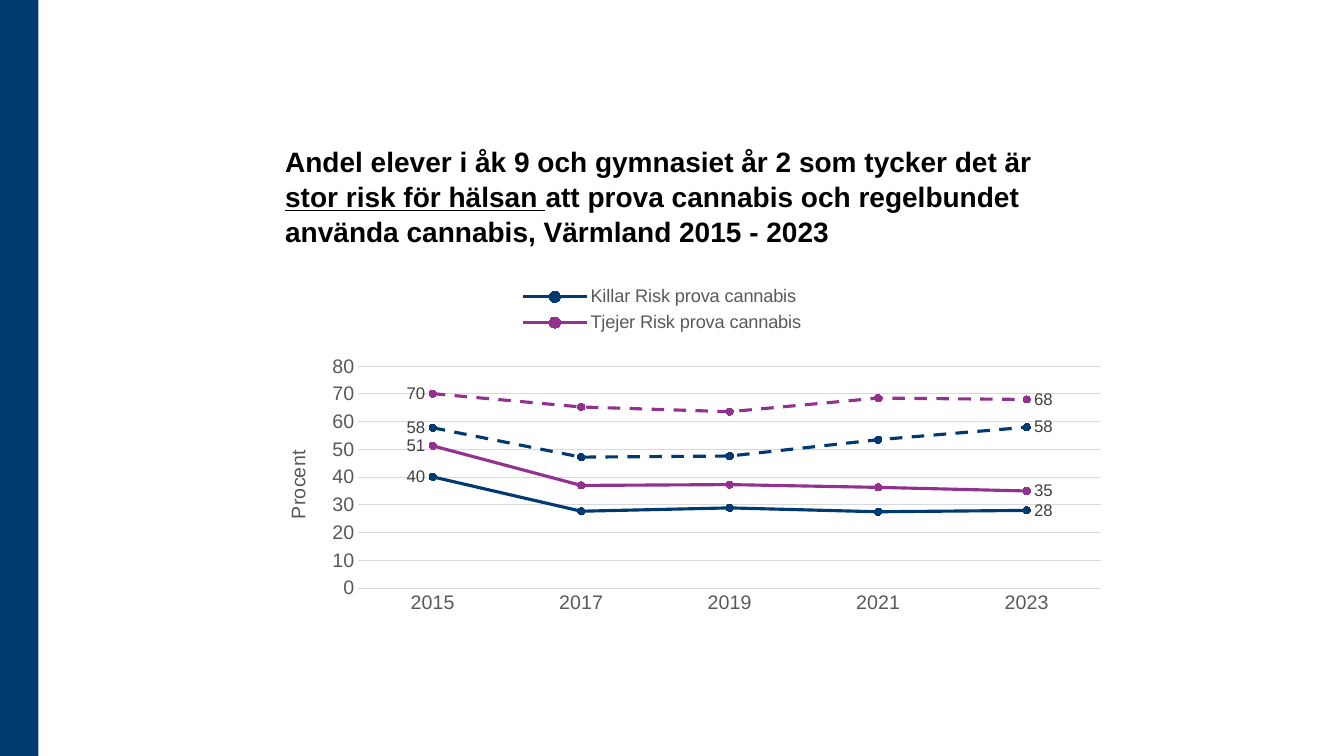
import pptx
import pptx.chart.data
import pptx.dml.color
import pptx.enum.chart
import pptx.enum.dml
import pptx.enum.shapes
import pptx.enum.text
import pptx.oxml
import pptx.oxml.ns
import pptx.util

Inches = pptx.util.Inches
Pt = pptx.util.Pt

NAVY = "003A70"
PURPLE = "93328E"
GREY = "595959"
GRID = "D9D9D9"

YEARS = ["2015", "2017", "2019", "2021", "2023"]
SERIES = [
    ("Killar Risk prova cannabis", [40.1, 27.7, 28.9, 27.5, 28], NAVY, False),
    ("Tjejer Risk prova cannabis", [51.3, 37, 37.3, 36.3, 35], PURPLE, False),
    ("Killar Risk regelbundet använda cannabis", [57.8, 47.2, 47.6, 53.5, 58], NAVY, True),
    ("Tjejer Risk regelbundet använda cannabis", [70.1, 65.3, 63.6, 68.5, 68], PURPLE, True),
]


def color(value):
    return pptx.dml.color.RGBColor.from_string(value)


def fill_solid(fill, value):
    fill.solid()
    fill.fore_color.rgb = color(value)


def style_font(font, size, value, bold=False, underline=False):
    font.name = "Arial"
    font.size = Pt(size)
    font.bold = bold
    font.underline = underline
    font.color.rgb = color(value)


def style_line(line, value, width):
    line.color.rgb = color(value)
    line.width = Pt(width)


def add_span(para, text, **style):
    span = para.add_run()
    span.text = text
    style_font(span.font, **style)


def add_side_bar(page):
    bar = page.shapes.add_shape(
        pptx.enum.shapes.MSO_SHAPE.RECTANGLE, 0, 0, Inches(0.38), Inches(7.5))
    bar.shadow.inherit = False
    fill_solid(bar.fill, NAVY)
    bar.line.fill.background()


def add_title(page):
    box = page.shapes.add_textbox(Inches(2.73), Inches(1.06), Inches(7.87), Inches(1.45))
    frame = box.text_frame
    frame.word_wrap = True
    frame.vertical_anchor = pptx.enum.text.MSO_ANCHOR.BOTTOM
    para = frame.paragraphs[0]
    para.line_spacing = 1.04
    style = {"size": 20, "value": "000000", "bold": True}
    add_span(para, "Andel elever i åk 9 och gymnasiet år 2 som tycker det är ", **style)
    add_span(para, "stor risk för hälsan ", underline=True, **style)
    add_span(para, "att prova cannabis och regelbundet använda cannabis, "
                   "Värmland 2015 - 2023", **style)


def layout_xml(left, top, width, height, inner=False):
    target = '<c:layoutTarget val="inner"/>' if inner else ""
    return pptx.oxml.parse_xml(
        f'<c:layout {pptx.oxml.ns.nsdecls("c")}><c:manualLayout>{target}'
        '<c:xMode val="edge"/><c:yMode val="edge"/>'
        f'<c:x val="{left}"/><c:y val="{top}"/><c:w val="{width}"/><c:h val="{height}"/>'
        '</c:manualLayout></c:layout>')


def set_plot_layout(chart):
    area = chart.plots[0]._element.getparent()
    for old in area.findall(pptx.oxml.ns.qn("c:layout")):
        area.remove(old)
    area.insert(0, layout_xml(0.099, 0.258, 0.883, 0.622, inner=True))


def style_legend(chart):
    chart.has_legend = True
    legend = chart.legend
    legend.position = pptx.enum.chart.XL_LEGEND_POSITION.TOP
    legend.include_in_layout = False
    style_font(legend.font, 13, GREY)
    element = legend._element
    for old in element.findall(pptx.oxml.ns.qn("c:layout")):
        element.remove(old)
    parts = [pptx.oxml.parse_xml(
        f'<c:legendEntry {pptx.oxml.ns.nsdecls("c")}><c:idx val="{index}"/>'
        '<c:delete val="1"/></c:legendEntry>')
        for index, row in enumerate(SERIES) if row[3]]
    parts.append(layout_xml(0.28, 0.02, 0.36, 0.16))
    for offset, part in enumerate(parts, start=1):
        element.insert(offset, part)


def style_axes(chart):
    years, percent = chart.category_axis, chart.value_axis
    for axis in (years, percent):
        axis.major_tick_mark = pptx.enum.chart.XL_TICK_MARK.NONE
        axis.minor_tick_mark = pptx.enum.chart.XL_TICK_MARK.NONE
        style_font(axis.tick_labels.font, 14, GREY)
    style_line(years.format.line, GRID, 0.75)
    percent.format.line.fill.background()
    percent.minimum_scale = 0
    percent.maximum_scale = 80
    percent.major_unit = 10
    percent.has_major_gridlines = True
    style_line(percent.major_gridlines.format.line, GRID, 0.75)
    percent.tick_labels.number_format = "0"
    percent.tick_labels.number_format_is_linked = False
    add_span(percent.axis_title.text_frame.paragraphs[0], "Procent", size=14, value=GREY)


def style_series(series, value, dashed):
    series.smooth = False
    style_line(series.format.line, value, 2.25)
    if dashed:
        series.format.line.dash_style = pptx.enum.dml.MSO_LINE.DASH
    series.marker.style = pptx.enum.chart.XL_MARKER_STYLE.CIRCLE
    series.marker.size = 5
    fill_solid(series.marker.format.fill, value)
    style_line(series.marker.format.line, value, 0.75)
    series.data_labels.show_value = False
    position = pptx.enum.chart.XL_LABEL_POSITION
    for index, side in ((0, position.LEFT), (len(YEARS) - 1, position.RIGHT)):
        label = series.points[index].data_label
        style_font(label.font, 12, "404040")
        label.position = side


def add_risk_chart(page):
    data = pptx.chart.data.CategoryChartData(number_format="0")
    data.categories = YEARS
    for name, values, _, _ in SERIES:
        data.add_series(name, values)
    chart = page.shapes.add_chart(
        pptx.enum.chart.XL_CHART_TYPE.LINE_MARKERS,
        Inches(2.73), Inches(2.72), Inches(8.34), Inches(3.54), data).chart
    chart.has_title = False
    style_font(chart.font, 14, "000000")
    chart.plots[0].vary_by_categories = False
    set_plot_layout(chart)
    style_legend(chart)
    style_axes(chart)
    for series, (_, _, value, dashed) in zip(chart.plots[0].series, SERIES):
        style_series(series, value, dashed)


def main():
    deck = pptx.Presentation()
    deck.slide_width = Inches(13.33)
    deck.slide_height = Inches(7.5)
    page = deck.slides.add_slide(deck.slide_layouts[6])
    add_side_bar(page)
    add_title(page)
    add_risk_chart(page)
    deck.save("out.pptx")


if __name__ == "__main__":
    main()
